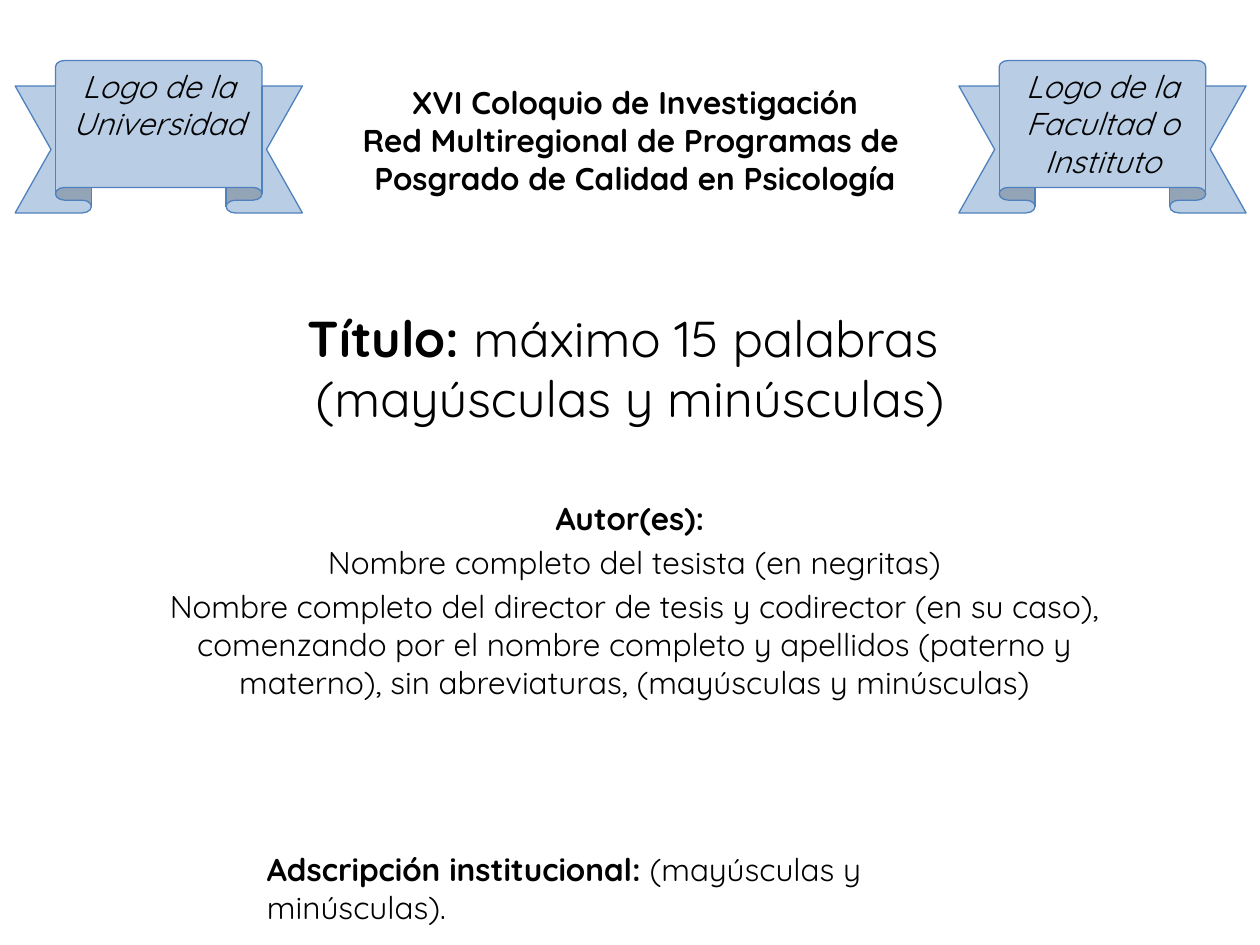
from dataclasses import dataclass

from pptx import Presentation
from pptx.dml.color import RGBColor
from pptx.enum.shapes import MSO_SHAPE as Shape
from pptx.enum.text import MSO_ANCHOR as Anchor, MSO_AUTO_SIZE as AutoSize, PP_ALIGN as Align
from pptx.util import Inches, Pt

BLACK = RGBColor(0x00, 0x00, 0x00)
PALE_BLUE = RGBColor(0xB9, 0xCD, 0xE5)
BLUE = RGBColor(0x4F, 0x81, 0xBD)
FONT = "Quicksand"
COLS, ROWS = 10, 7.5  # grid of one-inch cells


@dataclass
class Box:
    col: float
    row: float
    cols: float
    rows: float

    def place(self) -> tuple:
        return tuple(Inches(v) for v in (self.col, self.row, self.cols, self.rows))


@dataclass
class Run:
    text: str
    bold: bool = False
    italic: bool = False


def write(tf, paragraphs: list[list[Run]], *, size: float = 18, align=Align.CENTER,
          anchor=Anchor.TOP, before: float = 0) -> None:
    """Fill a text frame with paragraphs of runs; a newline is a line break."""
    tf.word_wrap = True
    tf.auto_size = AutoSize.NONE
    tf.vertical_anchor = anchor
    for i, runs in enumerate(paragraphs):
        p = tf.add_paragraph() if i else tf.paragraphs[0]
        p.alignment = align
        p.space_before = Pt(before)
        for run in runs:
            for j, line in enumerate(run.text.split("\n")):
                if j:
                    p.add_line_break()
                r = p.add_run()
                r.text = line
                r.font.name, r.font.size = FONT, Pt(size)
                r.font.bold, r.font.italic = run.bold, run.italic
                r.font.color.rgb = BLACK


def add_text(s, box: Box, paragraphs: list[list[Run]], **fmt) -> None:
    write(s.shapes.add_textbox(*box.place()).text_frame, paragraphs, **fmt)


def add_ribbon(s, box: Box, text: str) -> None:
    sp = s.shapes.add_shape(Shape.UP_RIBBON, *box.place())
    sp.adjustments[0], sp.adjustments[1] = 0.167, 0.719
    sp.shadow.inherit = False
    sp.fill.solid()
    sp.fill.fore_color.rgb = PALE_BLUE
    sp.line.color.rgb = BLUE
    sp.line.width = Pt(0.75)
    write(sp.text_frame, [[Run(text, italic=True)]])


def main() -> None:
    prs = Presentation()
    prs.slide_width, prs.slide_height = Inches(COLS), Inches(ROWS)
    s = prs.slides.add_slide(prs.slide_layouts[5])

    # Title, raised by a deeper bottom margin
    title = s.shapes.title
    title.left, title.top, title.width, title.height = Box(0.75, 2.33, 8.5, 1.61).place()
    title.text_frame.margin_bottom = Inches(0.49)
    write(title.text_frame,
          [[Run("Título:\u00a0", bold=True),
            Run("máximo 15 palabras \n(mayúsculas y minúsculas)")]],
          size=28.8, anchor=Anchor.MIDDLE)

    # Authors
    add_text(s, Box(1.06, 3.91, 7.95, 2.26), [
        [Run("Autor(es):\u00a0", bold=True)],
        [Run("Nombre completo del tesista (en negritas)")],
        [Run("Nombre completo del director de tesis y codirector (en su caso), "
             "comenzando por el nombre completo y apellidos (paterno y materno), "
             "sin abreviaturas, (mayúsculas y minúsculas)")],
    ], before=3.6)

    # Affiliation
    add_text(s, Box(2.02, 6.7, 5.66, 0.4),
             [[Run("Adscripción institucional:\u00a0", bold=True),
               Run("(mayúsculas y minúsculas).")]], align=Align.LEFT)

    # Event heading between the two logo ribbons
    heading = ("XVI Coloquio de Investigación",
               "Red Multiregional de Programas de ",
               "Posgrado de Calidad en Psicología")
    add_text(s, Box(2.4, 0.61, 5.28, 1.01), [[Run(line, bold=True)] for line in heading])
    for col, text in ((0.12, "Logo de la Universidad"),
                      (7.61, "Logo de la Facultad o Instituto")):
        add_ribbon(s, Box(col, 0.48, 2.28, 1.21), text)

    prs.save("out.pptx")


if __name__ == "__main__":
    main()
